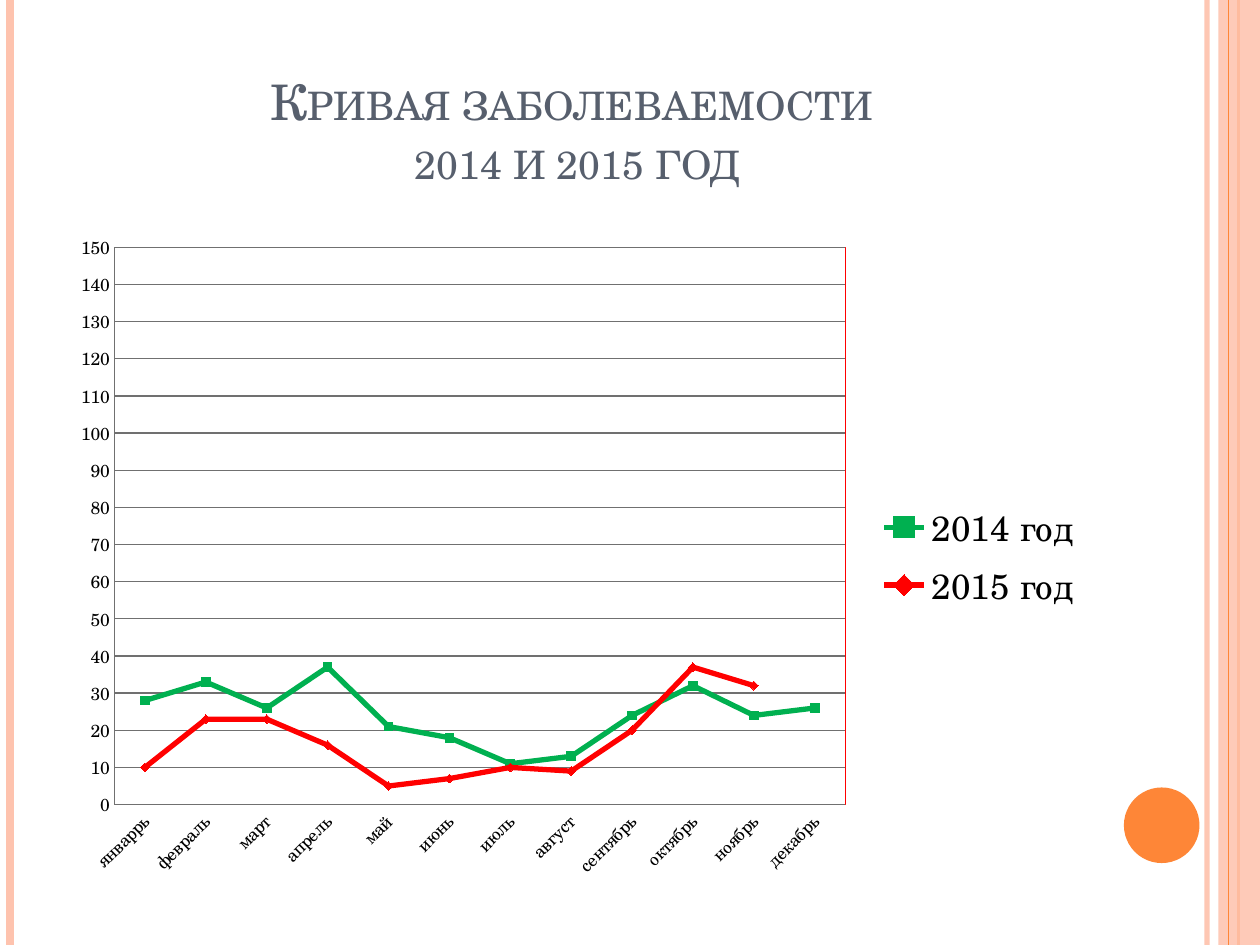
from dataclasses import dataclass

from lxml.etree import SubElement
from pptx import Presentation
from pptx.chart.data import CategoryChartData
from pptx.dml.color import RGBColor
from pptx.enum.chart import XL_CHART_TYPE, XL_LEGEND_POSITION, XL_MARKER_STYLE, XL_TICK_MARK
from pptx.enum.shapes import MSO_CONNECTOR, MSO_SHAPE
from pptx.enum.text import MSO_ANCHOR, MSO_AUTO_SIZE, PP_ALIGN
from pptx.oxml import parse_xml
from pptx.oxml.ns import nsdecls, qn
from pptx.util import Inches, Pt


@dataclass(frozen=True)
class Theme:
    font: str = "TeX Gyre Schola"
    title: RGBColor = RGBColor(0x57, 0x5F, 0x6D)
    text: RGBColor = RGBColor(0, 0, 0)
    grid: RGBColor = RGBColor(0x70, 0x70, 0x70)
    peach: RGBColor = RGBColor(0xFE, 0xC3, 0xAE)
    orange: RGBColor = RGBColor(0xFE, 0x86, 0x37)
    green: RGBColor = RGBColor(0, 0xB0, 0x50)
    red: RGBColor = RGBColor(0xFF, 0, 0)
    title_size: Pt = Pt(28)
    axis_size: Pt = Pt(10)
    legend_size: Pt = Pt(20)


theme = Theme()


def set_opacity(owner, percent):
    for color in owner.iter(qn("a:srgbClr")):
        SubElement(color, qn("a:alpha")).set("val", str(percent * 1000))


def place_in_chart(element, position, **shares):
    """Give a plot area or legend a manual layout in shares of the chart."""
    for old in element.findall(qn("c:layout")):
        element.remove(old)
    layout = parse_xml(f"<c:layout {nsdecls('c')}><c:manualLayout/></c:layout>")
    if element.tag == qn("c:plotArea"):
        SubElement(layout[0], qn("c:layoutTarget")).set("val", "inner")
    for mode in ("xMode", "yMode"):
        SubElement(layout[0], qn(f"c:{mode}")).set("val", "edge")
    for name, share in shares.items():
        SubElement(layout[0], qn(f"c:{name}")).set("val", str(share))
    element.insert(position, layout)


deck = Presentation()
deck.slide_width, deck.slide_height = Inches(10), Inches(7.5)
page = deck.slides.add_slide(deck.slide_layouts[5])

# Side stripes, from back to front: left, colour, width, opacity
stripes = [
    (9.58, theme.peach, 3, 93),
    (0.08, theme.peach, 4.5, 100),
    (9.83, theme.orange, 1.5, 100),
    (9.75, theme.orange, 0.75, 100),
]
for number, (left, color, width, opacity) in enumerate(stripes):
    if number == 3:
        band = page.shapes.add_shape(
            MSO_SHAPE.RECTANGLE, Inches(9.67), 0, Inches(0.33), deck.slide_height)
        band.shadow.inherit = False
        band.fill.solid()
        band.fill.fore_color.rgb = theme.peach
        band.line.fill.background()
        set_opacity(band.fill._xPr, 87)
    stripe = page.shapes.add_connector(
        MSO_CONNECTOR.STRAIGHT, Inches(left), 0, Inches(left), deck.slide_height)
    stripe.line.color.rgb = color
    stripe.line.width = Pt(width)
    if opacity < 100:
        set_opacity(stripe._element.spPr, opacity)
    SubElement(stripe._element.spPr, qn("a:effectLst"))

dot = page.shapes.add_shape(
    MSO_SHAPE.OVAL, Inches(8.92), Inches(6.25), Inches(0.6), Inches(0.6))
dot.shadow.inherit = False
dot.fill.solid()
dot.fill.fore_color.rgb = theme.orange
dot.line.fill.background()

# Title
title = page.shapes.title
title.left, title.top = Inches(0.5), Inches(0.3)
title.width, title.height = Inches(8.17), Inches(1.25)
frame = title.text_frame
frame.auto_size = MSO_AUTO_SIZE.NONE
frame.vertical_anchor = MSO_ANCHOR.BOTTOM
para = frame.paragraphs[0]
para.text = "Кривая заболеваемости \v2014 и 2015 год"
para.alignment = PP_ALIGN.CENTER
para.font.name = theme.font
para.font.size = theme.title_size
para.font.color.rgb = theme.title
for span in para.runs:
    span._r.get_or_add_rPr().set("cap", "small")

# Monthly cases
data = CategoryChartData()
data.categories = ["январрь", "февраль", "март", "апрель", "май", "июнь", "июль",
                   "август", "сентябрь", "октябрь", "ноябрь", "декабрь"]
data.add_series("2014 год", [28, 33, 26, 37, 21, 18, 11, 13, 24, 32, 24, 26])
data.add_series("2015 год", [10, 23, 23, 16, 5, 7, 10, 9, 20, 37, 32, None])
chart = page.shapes.add_chart(
    XL_CHART_TYPE.LINE_MARKERS, Inches(0.5), Inches(1.75), Inches(8.17), Inches(5.33),
    data).chart
chart.has_title = False
chart.font.name = theme.font
chart.font.size = theme.axis_size
chart.font.color.rgb = theme.text

plot = chart.plots[0]
plot.vary_by_categories = False
looks = [(theme.green, XL_MARKER_STYLE.SQUARE), (theme.red, XL_MARKER_STYLE.DIAMOND)]
for series, (color, symbol) in zip(plot.series, looks):
    series.smooth = False
    series.format.line.color.rgb = color
    series.format.line.width = Pt(3)
    series.marker.style = symbol
    series.marker.size = 5
    series.marker.format.fill.solid()
    series.marker.format.fill.fore_color.rgb = color
    series.marker.format.line.color.rgb = color

months, cases = chart.category_axis, chart.value_axis
cases.minimum_scale, cases.maximum_scale, cases.major_unit = 0, 150, 10
cases.has_major_gridlines = True
for axis in (months, cases):
    axis.major_tick_mark = axis.minor_tick_mark = XL_TICK_MARK.NONE
    axis.tick_labels.font.size = theme.axis_size
for ruled in (months, cases, cases.major_gridlines):
    ruled.format.line.color.rgb = theme.grid
    ruled.format.line.width = Pt(0.75)
months._element.txPr.bodyPr.set("rot", str(-45 * 60000))

chart.has_legend = True
legend = chart.legend
legend.position = XL_LEGEND_POSITION.RIGHT
legend.include_in_layout = False
legend.font.name = theme.font
legend.font.size = theme.legend_size
legend.font.color.rgb = theme.text
place_in_chart(legend._element, 1, x=0.79, y=0.41, w=0.2, h=0.18)

plot_area = chart._chartSpace.chart.plotArea
place_in_chart(plot_area, 0, x=0.05, y=0.04, w=0.71, h=0.83)
plot_area.append(parse_xml(
    f"<c:spPr {nsdecls('c', 'a')}><a:noFill/><a:ln w='{Pt(0.75)}'><a:solidFill>"
    f"<a:srgbClr val='{theme.red}'/></a:solidFill></a:ln></c:spPr>"))

deck.save("out.pptx")
